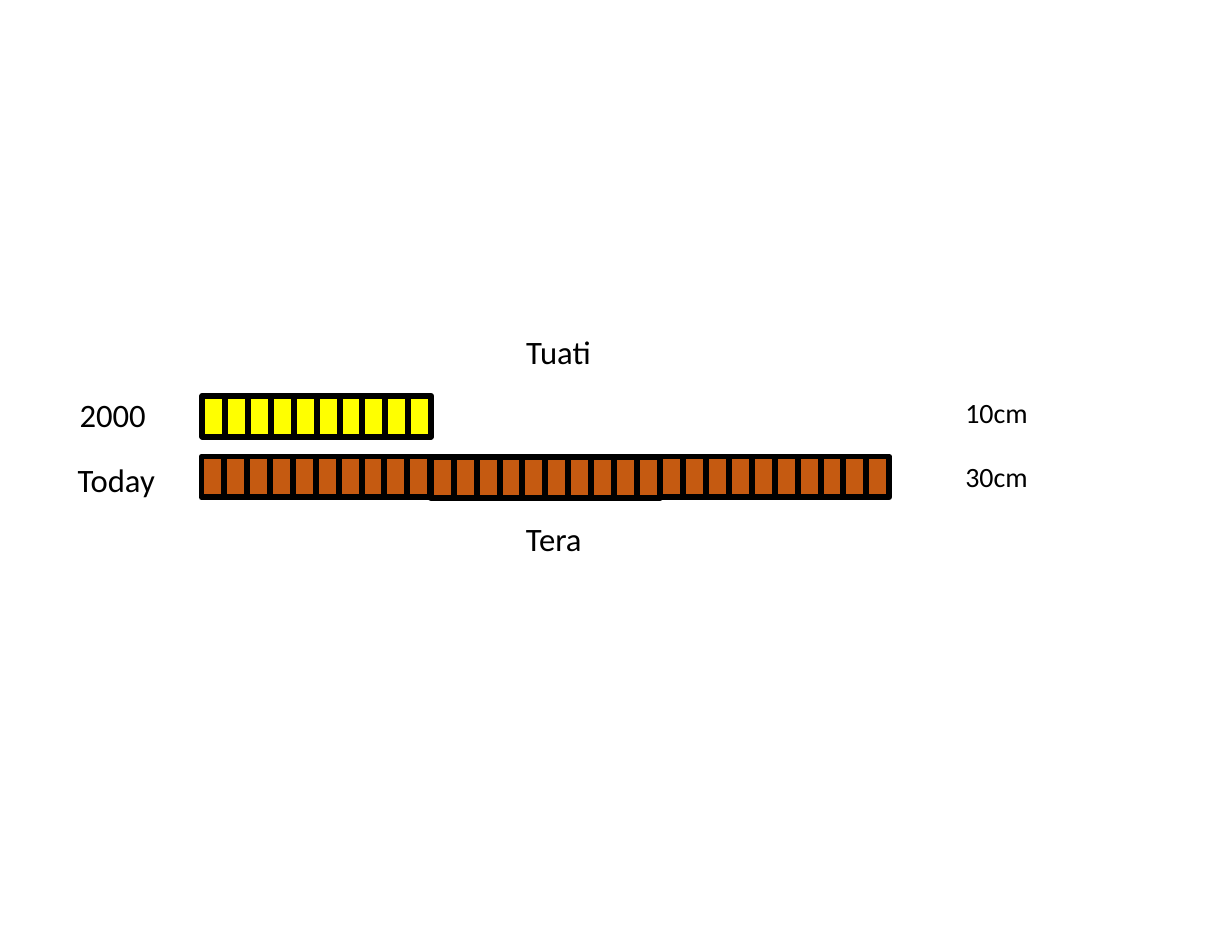
import pptx
import pptx.util
import pptx.dml.color
import pptx.enum.shapes
import pptx.enum.text

Pt = pptx.util.Pt
RGB = pptx.dml.color.RGBColor
ALIGN = pptx.enum.text.PP_ALIGN

# Content
COLORS = {"black": "000000", "yellow": "FFFF00", "brown": "C55A11"}
# One strip of ten cells each: left, top, fill
STRIPS = [
    (153.72, 300.6, "yellow"),
    (153, 346.68, "brown"),
    (327.24, 347.4, "brown"),
    (501.48, 346.68, "brown"),
]
# Label: text, left, top, width, size, alignment
LABELS = [
    ("2000", 53.28, 296.64, 82, 24.8, ALIGN.LEFT),
    ("Today", 51.84, 345.6, 102, 24.8, ALIGN.LEFT),
    ("Tuati", 347, 248.4, 154, 24.8, ALIGN.CENTER),
    ("Tera", 343.44, 390.24, 154, 24.8, ALIGN.CENTER),
    ("10cm", 725.76, 296.64, 103, 21.2, ALIGN.LEFT),
    ("30cm", 725.76, 345.6, 103, 21.2, ALIGN.LEFT),
]
CELLS = 10
CELL_W, CELL_H = 17.36, 31
BORDER = 4.5


def color(name):
    return RGB.from_string(COLORS[name])


def add_strip(s, left, top, fill):
    group = s.shapes.add_group_shape()
    for i in range(CELLS):
        cell = group.shapes.add_shape(
            pptx.enum.shapes.MSO_SHAPE.RECTANGLE,
            Pt(left + i * CELL_W), Pt(top), Pt(CELL_W), Pt(CELL_H))
        cell.shadow.inherit = False
        cell.fill.solid()
        cell.fill.fore_color.rgb = color(fill)
        cell.line.color.rgb = color("black")
        cell.line.width = Pt(BORDER)


def add_text(s, text, *, left, top, width, size, align):
    box = s.shapes.add_textbox(Pt(left), Pt(top), Pt(width), Pt(size * 1.5))
    tf = box.text_frame
    tf.word_wrap = True
    tf.auto_size = pptx.enum.text.MSO_AUTO_SIZE.SHAPE_TO_FIT_TEXT
    p = tf.paragraphs[0]
    p.alignment = align
    r = p.add_run()
    r.text = text
    r.font.name = "Calibri"
    r.font.size = Pt(size)
    r.font.color.rgb = color("black")


def main():
    prs = pptx.Presentation()
    prs.slide_width, prs.slide_height = Pt(935.28), Pt(708.48)
    s = prs.slides.add_slide(prs.slide_layouts[6])

    # Length strips
    for left, top, fill in STRIPS:
        add_strip(s, left, top, fill)

    # Years, directions and lengths
    for text, left, top, width, size, align in LABELS:
        add_text(s, text, left=left, top=top, width=width,
                 size=size, align=align)

    prs.save("out.pptx")


if __name__ == "__main__":
    main()
